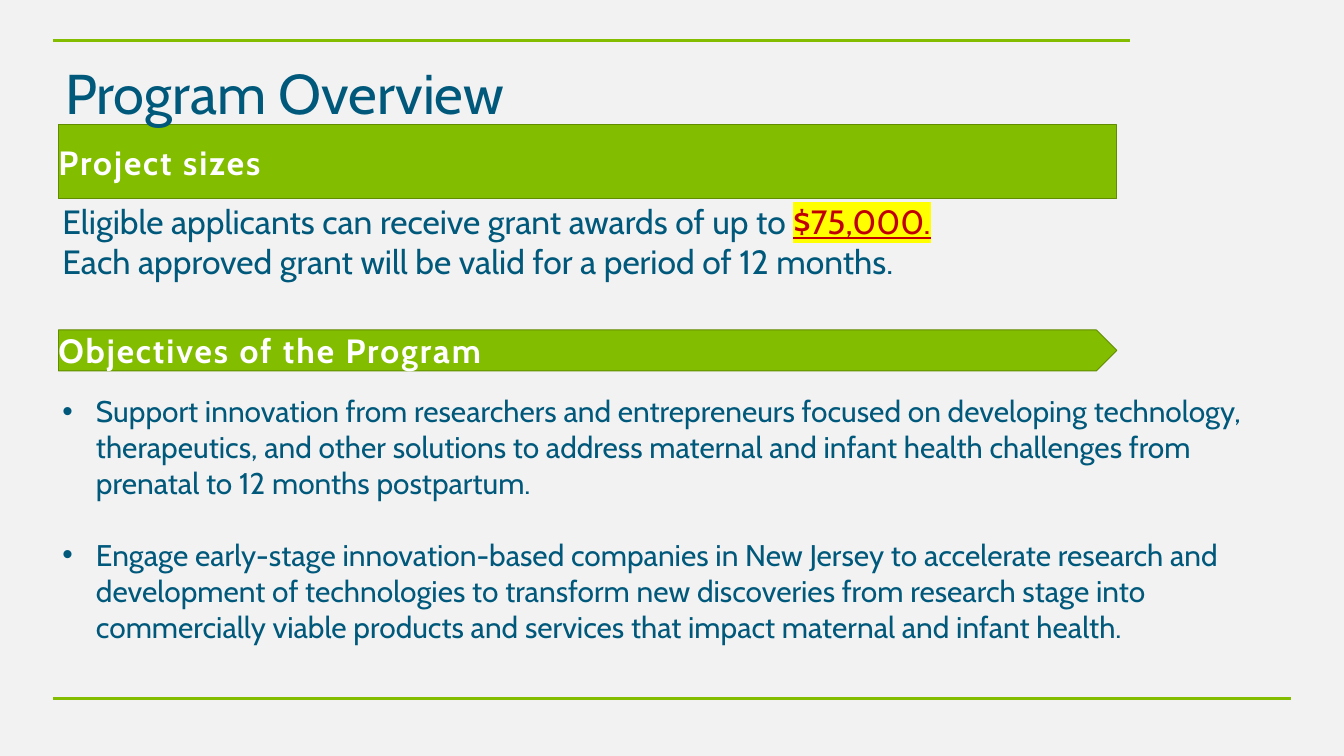
from lxml import etree
from pptx import Presentation
from pptx.dml.color import RGBColor
from pptx.enum.shapes import MSO_CONNECTOR, MSO_SHAPE
from pptx.enum.text import MSO_ANCHOR, PP_ALIGN
from pptx.oxml.ns import qn
from pptx.util import Inches, Pt

RECT, PENTAGON = MSO_SHAPE.RECTANGLE, MSO_SHAPE.PENTAGON
STRAIGHT = MSO_CONNECTOR.STRAIGHT
MIDDLE, LEFT = MSO_ANCHOR.MIDDLE, PP_ALIGN.LEFT

FONT = "Cabin"
NAVY, GREEN, RULE = "00587B", "83BD00", "84BD00"
OUTLINE, WHITE, RED, YELLOW = "618C00", "FFFFFF", "C00000", "FFFF00"

TITLE = "Program Overview"
RULES = [(0.6, 16.81), (10.4, 19.21)]
BARS = [
    ("Project sizes", RECT, 1.86, 1.1),
    ("Objectives of the Program", PENTAGON, 4.91, 0.61),
]
AWARD_START = "Eligible applicants can receive grant awards of up to "
AWARD_AMOUNT = "$75,000."
AWARD_PERIOD = "Each approved grant will be valid for a period of 12 months."
OBJECTIVES = [
    "Support innovation from researchers and entrepreneurs focused on developing technology, "
    "therapeutics, and other solutions to address maternal and infant health challenges from "
    "prenatal to 12 months postpartum.",
    "Engage early-stage innovation-based companies in New Jersey to accelerate research and "
    "development of technologies to transform new discoveries from research stage into "
    "commercially viable products and services that impact maternal and infant health.",
]


def rgb(color):
    return RGBColor.from_string(color)


def add_run(p, text, size, color=NAVY, bold=False):
    r = p.add_run()
    r.text = text
    r.font.size = Pt(size)
    r.font.name = FONT
    r.font.bold = bold
    r.font.color.rgb = rgb(color)
    return r


def highlight(r, color):
    mark = etree.Element(qn("a:highlight"))
    etree.SubElement(mark, qn("a:srgbClr"), val=color)
    r.font._element.find(qn("a:solidFill")).addnext(mark)


def add_bullet(p, indent):
    pPr = p._p.get_or_add_pPr()
    pPr.set("marL", str(Inches(indent)))
    pPr.set("indent", str(-Inches(indent)))
    etree.SubElement(pPr, qn("a:buFont"), typeface="Arial")
    etree.SubElement(pPr, qn("a:buChar"), char="•")


def add_text(s, x, y, w, h):
    tf = s.shapes.add_textbox(Inches(x), Inches(y), Inches(w), Inches(h)).text_frame
    tf.word_wrap = True
    return tf


def add_rule(s, y, right):
    line = s.shapes.add_connector(STRAIGHT, Inches(0.79), Inches(y), Inches(right), Inches(y))
    line.line.color.rgb = rgb(RULE)
    line.line.width = Pt(3)
    etree.SubElement(line._element.spPr, qn("a:effectLst"))


def add_bar(s, text, kind, y, h):
    sp = s.shapes.add_shape(kind, Inches(0.87), Inches(y), Inches(15.75), Inches(h))
    sp.shadow.inherit = False
    sp.fill.solid()
    sp.fill.fore_color.rgb = rgb(GREEN)
    sp.line.color.rgb = rgb(OUTLINE)
    sp.line.width = Pt(1)
    tf = sp.text_frame
    tf.word_wrap = True
    tf.vertical_anchor = MIDDLE
    tf.margin_left = tf.margin_right = tf.margin_top = tf.margin_bottom = 0
    p = tf.paragraphs[0]
    p.alignment = LEFT
    r = add_run(p, text, 36, WHITE, bold=True)
    r.font._element.set("spc", "210")


def main():
    prs = Presentation()
    prs.slide_width, prs.slide_height = Inches(20), Inches(11.25)
    s = prs.slides.add_slide(prs.slide_layouts[6])
    s.background.fill.solid()
    s.background.fill.fore_color.rgb = rgb("F2F2F2")

    for y, right in RULES:
        add_rule(s, y, right)
    for bar in BARS:
        add_bar(s, *bar)

    tf = add_text(s, 0.83, 2.94, 15.54, 1.31)
    p = tf.paragraphs[0]
    add_run(p, AWARD_START, 36)
    r = add_run(p, AWARD_AMOUNT, 36, RED)
    r.font.underline = True
    highlight(r, YELLOW)
    add_run(tf.add_paragraph(), AWARD_PERIOD, 36)

    tf = add_text(s, 0.83, 5.8, 17.95, 3.87)
    for i, text in enumerate(OBJECTIVES):
        p = tf.add_paragraph() if i else tf.paragraphs[0]
        if i:
            p.space_before = Pt(38.4)
        add_bullet(p, 0.5)
        add_run(p, text, 32)

    tf = add_text(s, 0.87, 0.82, 7.32, 1.11)
    add_run(tf.paragraphs[0], TITLE, 60)

    prs.save("out.pptx")


if __name__ == "__main__":
    main()
